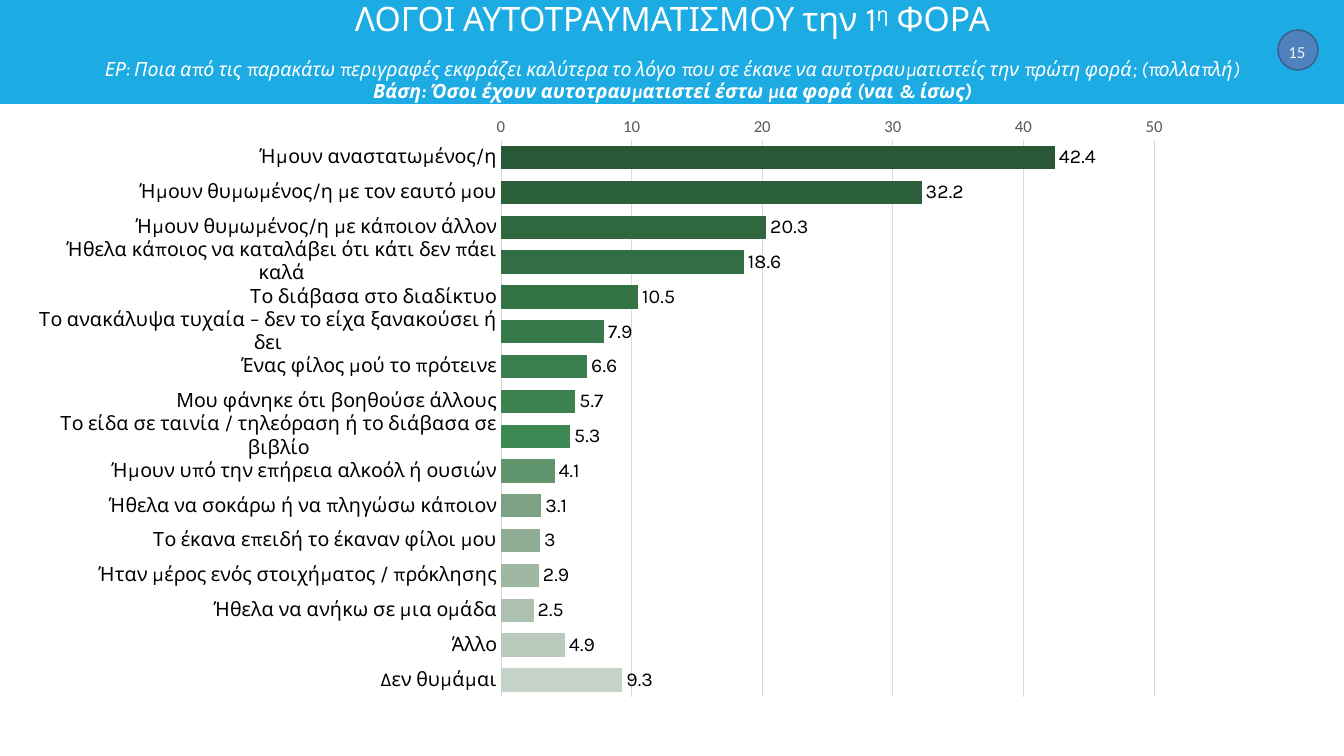
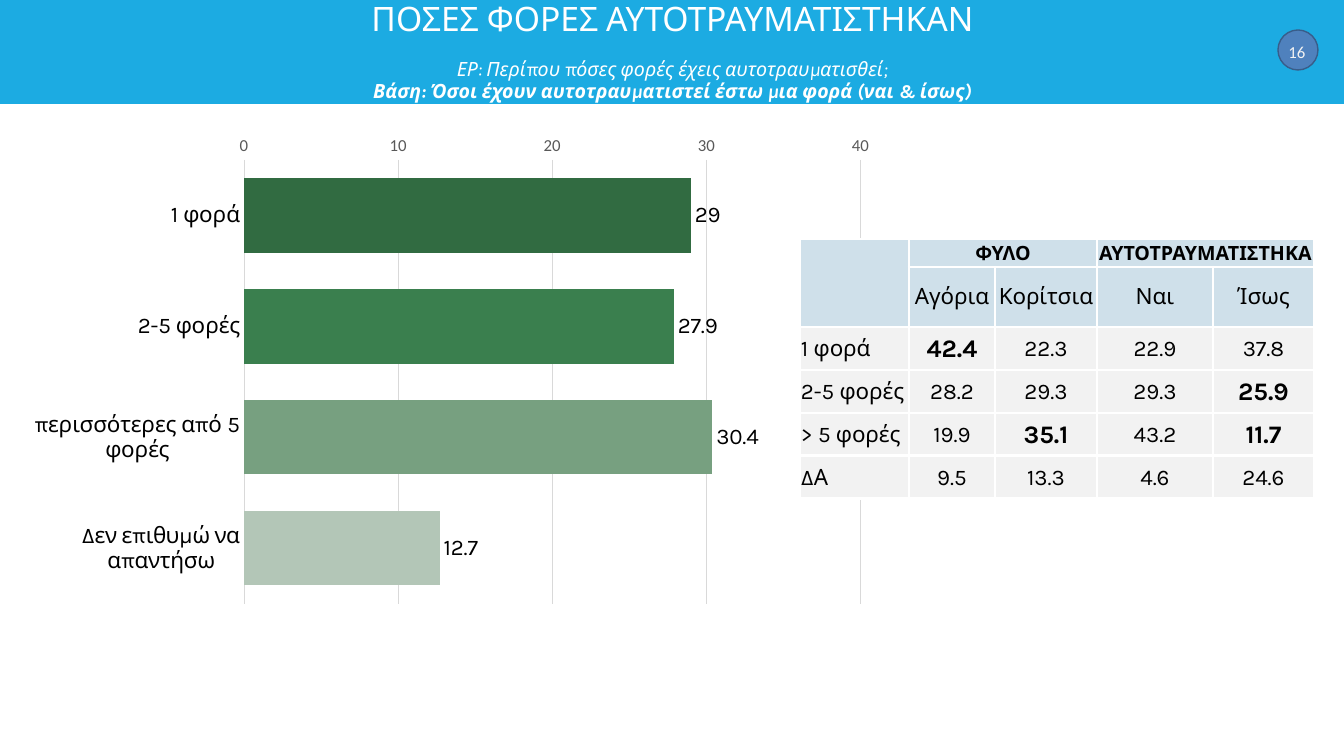
from lxml import etree
from pptx import Presentation, util as u
from pptx.chart.data import CategoryChartData
from pptx.dml.color import RGBColor
from pptx.enum import chart as c, shapes, text
from pptx.oxml.ns import qn

SLIDE_WIDTH, SLIDE_HEIGHT = 1344, 756
PX_PER_INCH = 100.8

BLUE = RGBColor(0x1C, 0xAB, 0xE2)
BADGE_FILL = RGBColor(0x4F, 0x81, 0xBD)
BADGE_LINE = RGBColor(0x38, 0x5D, 0x8A)
WHITE = RGBColor(0xFF, 0xFF, 0xFF)
BLACK = RGBColor(0x00, 0x00, 0x00)
PALE = RGBColor(0xF2, 0xF2, 0xF2)
HEADER_BLUE = RGBColor(0xCF, 0xE0, 0xEA)
GRID_GREY = RGBColor(0xD9, 0xD9, 0xD9)
AXIS_GREY = RGBColor(0x59, 0x59, 0x59)

REASON_GREENS = [RGBColor.from_string(code) for code in (
    "285836 2C603B 2F673F 326E43 347346 37794A 397E4D 3C8350 "
    "3E8853 60956D 7AA283 8EAD94 9FB8A4 ACC1B0 B9CABD C6D3C8").split()]
COUNT_GREENS = [RGBColor.from_string(code)
                for code in "316B41 3A7F4E 77A080 B3C6B7".split()]

REASONS = {
    "Ήμουν αναστατωμένος/η": 42.4,
    "Ήμουν θυμωμένος/η με τον εαυτό μου": 32.2,
    "Ήμουν θυμωμένος/η με κάποιον άλλον": 20.3,
    "Ήθελα κάποιος να καταλάβει ότι κάτι δεν πάει καλά": 18.6,
    "Το διάβασα στο διαδίκτυο": 10.5,
    "Το ανακάλυψα τυχαία – δεν το είχα ξανακούσει ή δει": 7.9,
    "Ένας φίλος μού το πρότεινε": 6.6,
    "Μου φάνηκε ότι βοηθούσε άλλους": 5.7,
    "Το είδα σε ταινία / τηλεόραση ή το διάβασα σε βιβλίο": 5.3,
    "Ήμουν υπό την επήρεια αλκοόλ ή ουσιών": 4.1,
    "Ήθελα να σοκάρω ή να πληγώσω κάποιον": 3.1,
    "Το έκανα επειδή το έκαναν φίλοι μου": 3,
    "Ήταν μέρος ενός στοιχήματος / πρόκλησης": 2.9,
    "Ήθελα να ανήκω σε μια ομάδα": 2.5,
    "Άλλο": 4.9,
    "Δεν θυμάμαι": 9.3,
}
COUNTS = {
    "1 φορά": 29,
    "2-5 φορές": 27.9,
    "περισσότερες από 5 φορές": 30.4,
    "Δεν επιθυμώ να απαντήσω": 12.7,
}
BASE = "Βάση: Όσοι έχουν αυτοτραυματιστεί έστω μια φορά (ναι & ίσως)"

BREAKDOWN = [
    ["", "ΦΥΛΟ", "", "ΑΥΤΟΤΡΑΥΜΑΤΙΣΤΗΚΑ", ""],
    ["", "Αγόρια", "Κορίτσια", "Ναι", "Ίσως"],
    ["1 φορά", "42.4", "22.3", "22.9", "37.8"],
    ["2-5 φορές", "28.2", "29.3", "29.3", "25.9"],
    ["> 5 φορές", "19.9", "35.1", "43.2", "11.7"],
    ["ΔΑ", "9.5", "13.3", "4.6", "24.6"],
]
BREAKDOWN_MERGES = [((0, 0), (1, 0)), ((0, 1), (0, 2)), ((0, 3), (0, 4))]
HIGHLIGHTS = {"42.4", "25.9", "35.1", "11.7"}


def px(length):
    return u.Emu(round(length * u.Inches(1) / PX_PER_INCH))


def box(*lengths):
    return [px(length) for length in lengths]


def set_font(font, size, color, name="Karla", bold=False, italic=False):
    font.size, font.name = u.Pt(size), name
    font.bold, font.italic = bold, italic
    font.color.rgb = color


class Deck:
    """Holds the presentation, its style and the slide being built."""

    def __init__(self):
        self.presentation = Presentation()
        self.presentation.slide_width = px(SLIDE_WIDTH)
        self.presentation.slide_height = px(SLIDE_HEIGHT)
        self.layout = self.presentation.slide_layouts[5]
        self.slide = None

    def add_slide(self, number):
        first = self.slide is None
        self.slide = self.presentation.slides.add_slide(self.layout)
        if first:
            self.share_header()
        self.add_number(number)

    def share_header(self):
        """Put the band and the number badge on the layout, behind every slide."""
        kinds = shapes.MSO_SHAPE
        band = self.add_shape(kinds.RECTANGLE, (0, 0, SLIDE_WIDTH, 104), BLUE)
        badge = self.add_shape(kinds.OVAL, (1278, 30, 40, 40), BADGE_FILL, BADGE_LINE)
        for shape in (band, badge):
            self.layout.shapes._spTree.append(shape._element)

    def add_shape(self, kind, place, fill, line=None):
        shape = self.slide.shapes.add_shape(kind, *box(*place))
        shape.shadow.inherit = False
        shape.fill.solid()
        shape.fill.fore_color.rgb = fill
        if line is None:
            shape.line.fill.background()
        else:
            shape.line.color.rgb = line
            shape.line.width = u.Pt(1)
        return shape

    def add_number(self, number):
        frame = self.slide.shapes.add_textbox(*box(1251, 2, 92, 99)).text_frame
        frame.word_wrap = True
        frame.vertical_anchor = text.MSO_ANCHOR.MIDDLE
        frame.text = str(number)
        paragraph = frame.paragraphs[0]
        paragraph.alignment = text.PP_ALIGN.CENTER
        set_font(paragraph.runs[0].font, 12, PALE, "Calibri")

    def add_title(self, heading, question):
        """Fill the title; heading is a list of runs, every second one raised."""
        title = self.slide.shapes.title
        title.left, title.top, title.width, title.height = box(93, 8, 1159, 89)
        frame = title.text_frame
        frame.margin_left = frame.margin_right = 0
        frame.auto_size = text.MSO_AUTO_SIZE.NONE
        frame.vertical_anchor = text.MSO_ANCHOR.MIDDLE
        frame.text = "\n".join(["", question, BASE])
        heading_line, question_line, base_line = frame.paragraphs
        for index, part in enumerate(heading):
            run = heading_line.add_run()
            run.text = part
            set_font(run.font, 24, WHITE)
            if index % 2:
                run._r.get_or_add_rPr().set("baseline", "30000")
        set_font(question_line.runs[0].font, 14, WHITE, italic=True)
        set_font(base_line.runs[0].font, 14, WHITE, bold=True, italic=True)
        for paragraph in frame.paragraphs:
            paragraph.alignment = text.PP_ALIGN.CENTER
            paragraph.line_spacing = 0.9
            paragraph.space_before = u.Pt(0)
        question_line.space_before = u.Pt(15)

    def add_bar_chart(self, place, values, colors, size, maximum, plot_area):
        data = CategoryChartData()
        data.categories = list(values)
        data.add_series("Series 1", list(values.values()))
        chart = self.slide.shapes.add_chart(
            c.XL_CHART_TYPE.BAR_CLUSTERED, *box(*place), data).chart
        chart.has_legend = chart.has_title = False
        set_font(chart.font, 10, BLACK, "Calibri")

        plot = chart.plots[0]
        plot.gap_width = 49
        plot.vary_by_categories = False
        plot.has_data_labels = True
        plot.data_labels.show_value = True
        plot.data_labels.position = c.XL_LABEL_POSITION.OUTSIDE_END
        set_font(plot.data_labels.font, size, BLACK)
        for index, color in enumerate(colors):
            fill = plot.series[0].points[index].format.fill
            fill.solid()
            fill.fore_color.rgb = color

        categories, scale = chart.category_axis, chart.value_axis
        categories.reverse_order = True
        categories.crosses = c.XL_AXIS_CROSSES.MAXIMUM
        set_font(categories.tick_labels.font, size, BLACK)
        set_font(scale.tick_labels.font, 12, AXIS_GREY, "Calibri")
        scale.minimum_scale, scale.maximum_scale = 0, maximum
        scale.major_unit = 10
        scale.has_major_gridlines = True
        scale.format.line.fill.background()
        for axis in (categories, scale):
            axis.major_tick_mark = axis.minor_tick_mark = c.XL_TICK_MARK.NONE
        for line in (categories.format.line, scale.major_gridlines.format.line):
            line.color.rgb = GRID_GREY
            line.width = u.Pt(0.75)
        self.place_plot(chart, plot_area)

    def place_plot(self, chart, plot_area):
        """Fix the inner plot area, given as fractions of the chart."""
        area = chart._chartSpace.find(".//" + qn("c:plotArea"))
        for layout in area.findall(qn("c:layout")):
            area.remove(layout)
        layout = etree.Element(qn("c:layout"))
        manual = etree.SubElement(layout, qn("c:manualLayout"))
        settings = [("layoutTarget", "inner"), ("xMode", "edge"), ("yMode", "edge")]
        settings += zip("xywh", plot_area)
        for tag, value in settings:
            etree.SubElement(manual, qn("c:" + tag), val=str(value))
        area.insert(0, layout)

    def add_table(self, left, top, widths, heights, rows, merges, highlights):
        place = box(left, top, sum(widths), sum(heights))
        table = self.slide.shapes.add_table(len(heights), len(widths), *place).table
        table.first_row = table.horz_banding = False
        for column, width in zip(table.columns, widths):
            column.width = px(width)
        for row, height in zip(table.rows, heights):
            row.height = px(height)
        for row_index, row in enumerate(rows):
            for column_index, value in enumerate(row):
                strong = value in highlights
                size = 14 if row_index == 0 else 18 if strong else 16
                centred = row_index < 2 or column_index > 0
                self.format_cell(
                    table.cell(row_index, column_index), value, size,
                    strong or row_index == 0, centred,
                    HEADER_BLUE if row_index < 2 else PALE)
        for start, end in merges:
            table.cell(*start).merge(table.cell(*end))

    def format_cell(self, cell, value, size, bold, centred, fill):
        cell.margin_left = cell.margin_right = cell.margin_top = px(1)
        cell.margin_bottom = 0
        cell.vertical_anchor = text.MSO_ANCHOR.MIDDLE
        cell.text = value
        paragraph = cell.text_frame.paragraphs[0]
        if centred:
            paragraph.alignment = text.PP_ALIGN.CENTER
        for run in paragraph.runs:
            set_font(run.font, size, BLACK, bold=bold)
        if not value:
            etree.SubElement(paragraph._p, qn("a:endParaRPr"), sz=str(size * 100))
        properties = cell._tc.get_or_add_tcPr()
        for side in "LRTB":
            border = etree.SubElement(properties, qn("a:ln" + side), w=str(u.Pt(2.25)))
            solid = etree.SubElement(border, qn("a:solidFill"))
            etree.SubElement(solid, qn("a:srgbClr"), val=str(WHITE))
        cell.fill.solid()
        cell.fill.fore_color.rgb = fill


def main():
    deck = Deck()

    deck.add_slide(15)
    deck.add_title(
        ["ΛΟΓΟΙ ΑΥΤΟΤΡΑΥΜΑΤΙΣΜΟΥ την 1", "η", " ΦΟΡΑ"],
        "ΕΡ: Ποια από τις παρακάτω περιγραφές εκφράζει καλύτερα το λόγο που σε "
        "έκανε να αυτοτραυματιστείς την πρώτη φορά; (πολλαπλή)")
    deck.add_bar_chart((39, 115, 1212, 633), REASONS, REASON_GREENS, 14, 50,
                       (0.38, 0.04, 0.54, 0.88))

    deck.add_slide(16)
    deck.add_title(["ΠΟΣΕΣ ΦΟΡΕΣ ΑΥΤΟΤΡΑΥΜΑΤΙΣΤΗΚΑΝ"],
                   "ΕΡ: Περίπου πόσες φορές έχεις αυτοτραυματισθεί;")
    deck.add_bar_chart((14, 121, 920, 555), COUNTS, COUNT_GREENS, 16, 40,
                       (0.25, 0.07, 0.67, 0.8))
    deck.add_table(800, 239, [109, 86, 102, 116, 101], [28, 60] + [43] * 4,
                   BREAKDOWN, BREAKDOWN_MERGES, HIGHLIGHTS)

    deck.presentation.save("out.pptx")


if __name__ == "__main__":
    main()
